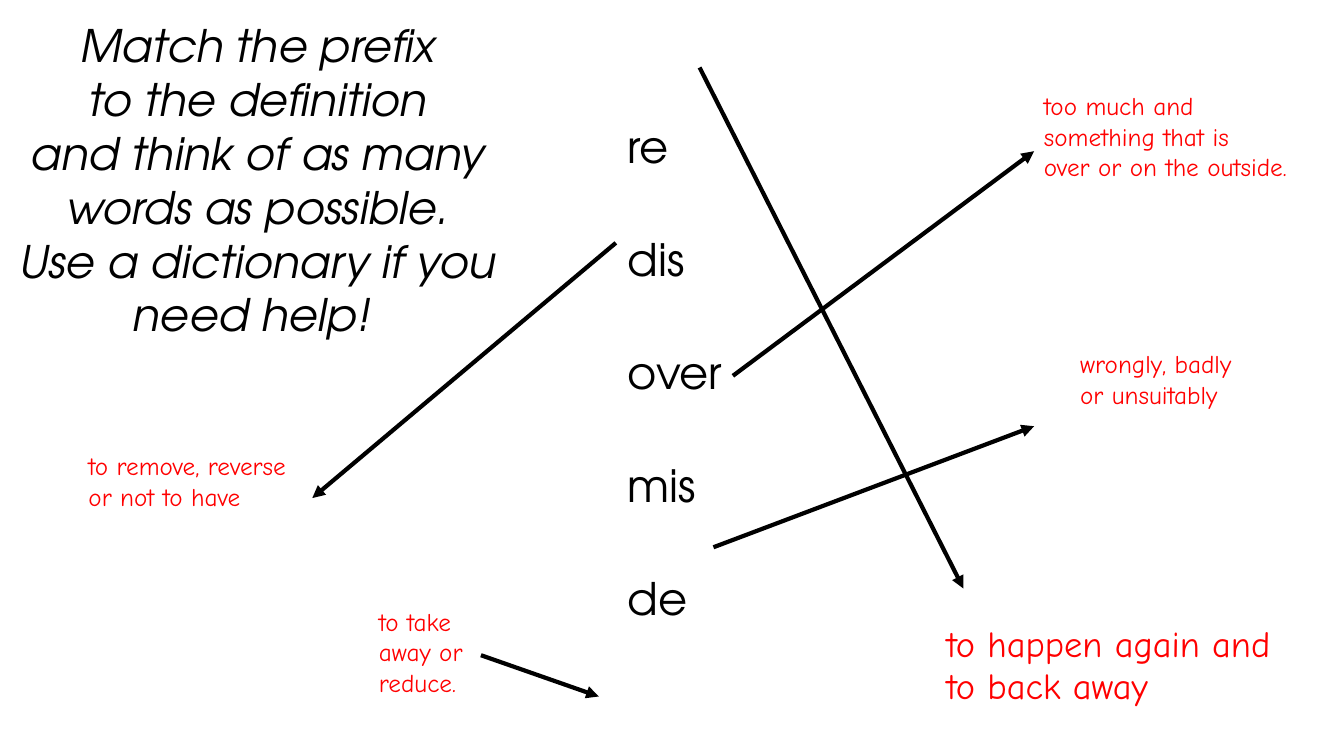
from lxml import etree
from pptx import Presentation
from pptx import util as u
from pptx.dml.color import RGBColor
from pptx.enum import shapes, text
from pptx.oxml.ns import qn

BLACK = RGBColor(0x00, 0x00, 0x00)
RED = RGBColor(0xFF, 0x00, 0x00)
PREFIX_FONT = "TeX Gyre Adventor"
MEANING_FONT = "Comic Neue"


def write(frame, words, font=MEANING_FONT, size=18, color=RED, italic=False,
          align=text.PP_ALIGN.LEFT, gap=0):
    """Fill a text frame, one paragraph a line, with gap points between them."""
    frame.word_wrap = True
    lines = words.split("\n")
    for index, line in enumerate(lines):
        para = frame.add_paragraph() if index else frame.paragraphs[0]
        para.alignment = align
        para.space_before = u.Pt(0)
        para.space_after = u.Pt(gap if index < len(lines) - 1 else 0)
        span = para.add_run()
        span.text = line
        span.font.name = font
        span.font.size = u.Pt(size)
        span.font.italic = italic
        span.font.color.rgb = color


def add_plain_cell(page, left, top, width, height):
    """Add a one-cell table without style and return its cell."""
    table = page.shapes.add_table(1, 1, u.Cm(left), u.Cm(top), u.Cm(width), u.Cm(height)).table
    table.first_row = table.horz_banding = False
    cell = table.cell(0, 0)
    cell.fill.background()
    cell.vertical_anchor = text.MSO_ANCHOR.MIDDLE
    return cell


deck = Presentation()
deck.slide_width, deck.slide_height = u.Cm(33.87), u.Cm(19.05)
page = deck.slides.add_slide(deck.slide_layouts[5])

# Instructions
title = page.shapes.title
title.left, title.top, title.width, title.height = u.Cm(0), u.Cm(0.33), u.Cm(13), u.Cm(8.46)
title.text_frame.vertical_anchor = text.MSO_ANCHOR.TOP
title.text_frame.auto_size = text.MSO_AUTO_SIZE.SHAPE_TO_FIT_TEXT
write(title.text_frame,
      "Match the prefix\nto the definition\nand think of as many\nwords as possible.\n"
      "Use a dictionary if you need help! ",
      font=PREFIX_FONT, size=32, color=BLACK, italic=True, align=text.PP_ALIGN.CENTER)

# Prefixes
prefixes = add_plain_cell(page, 15.67, 0.64, 17.6, 17.75)
prefixes.margin_left = prefixes.margin_right = u.Cm(0.15)
prefixes.margin_top = prefixes.margin_bottom = u.Cm(0.08)
write(prefixes.text_frame, "re\ndis\nover\nmis\nde",
      font=PREFIX_FONT, size=32, color=BLACK, gap=51)

# Meanings
again = add_plain_cell(page, 23.6, 15.57, 9.68, 2.4)
write(again.text_frame, "to happen again and to back away", size=26)

meanings = [
    ("too much and something that is\nover or on the outside.", 26.06, 2.16, 7.21, 3.33),
    ("to remove, reverse or not to have", 1.98, 11.23, 5.89, 2.57),
    ("to take away or reduce.", 9.3, 15.16, 3.28, 3.33),
    ("wrongly, badly or unsuitably", 26.97, 8.66, 4.39, 2.57),
]
for words, *place in meanings:
    box = page.shapes.add_textbox(*map(u.Cm, place))
    box.text_frame.auto_size = text.MSO_AUTO_SIZE.SHAPE_TO_FIT_TEXT
    write(box.text_frame, words)

# Arrows from prefix to meaning
arrows = [
    (12.12, 16.51, 15.09, 17.55),
    (18.47, 9.47, 26.06, 3.81),
    (17.63, 1.7, 24.28, 14.83),
    (15.52, 6.12, 7.87, 12.55),
    (17.98, 13.79, 26.06, 10.74),
]
for ends in arrows:
    arrow = page.shapes.add_connector(shapes.MSO_CONNECTOR.STRAIGHT, *map(u.Cm, ends))
    arrow.line.color.rgb = BLACK
    arrow.line.width = u.Pt(3)
    etree.SubElement(arrow.line._get_or_add_ln(), qn("a:tailEnd"), type="triangle")
    etree.SubElement(arrow._element.spPr, qn("a:effectLst"))

deck.save("out.pptx")
